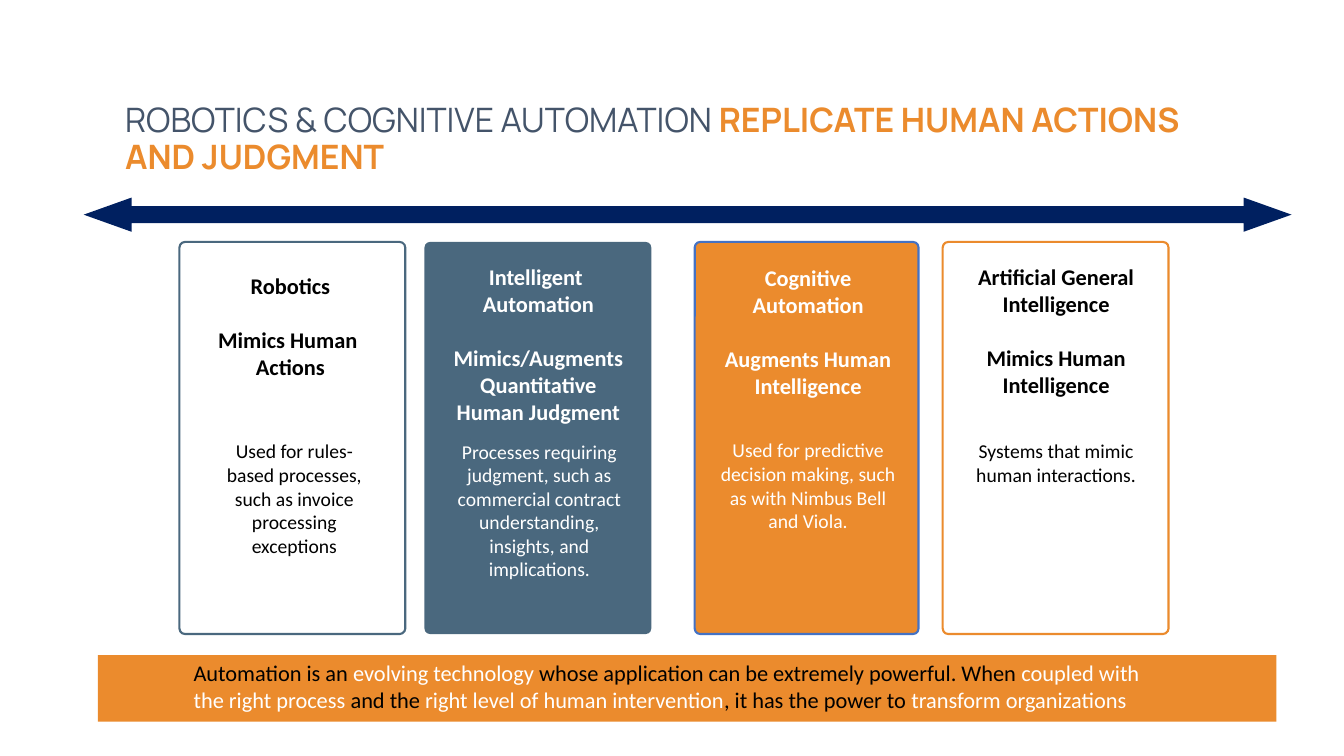
from pptx import Presentation
from pptx.dml.color import RGBColor
from pptx.enum.shapes import MSO_SHAPE
from pptx.enum.text import MSO_ANCHOR, MSO_AUTO_SIZE, PP_ALIGN
from pptx.util import Inches, Pt

NAVY = RGBColor(0x00, 0x20, 0x60)
GREY = RGBColor(0x44, 0x54, 0x6A)
STEEL = RGBColor(0x4A, 0x68, 0x7E)
GOLD = RGBColor(0xEB, 0x8B, 0x2D)
BLUE = RGBColor(0x44, 0x72, 0xC4)
BLACK = RGBColor(0, 0, 0)
WHITE = RGBColor(255, 255, 255)


class Deck:
    """Holds the slide and its text style, and draws each kind of element."""

    def __init__(self):
        self.prs = Presentation()
        self.prs.slide_width = Inches(13.33)
        self.prs.slide_height = Inches(7.5)
        self.slide = self.prs.slides.add_slide(self.prs.slide_layouts[5])
        self.font = "Calibri"

    def run(self, para, text, size, ink, bold=False, font=None):
        run = para.add_run()
        run.text = text
        run.font.name = font or self.font
        run.font.size = Pt(size)
        run.font.bold = bold
        run.font.color.rgb = ink

    def title(self, box, parts):
        shape = self.slide.shapes.title
        shape.left, shape.top, shape.width, shape.height = map(Inches, box)
        frame = shape.text_frame
        frame.word_wrap = True
        frame.auto_size = MSO_AUTO_SIZE.NONE
        frame.vertical_anchor = MSO_ANCHOR.TOP
        para = frame.paragraphs[0]
        para.alignment = PP_ALIGN.LEFT
        para.line_spacing = 0.9
        for text, ink, bold in parts:
            self.run(para, text, 24, ink, bold, "Manrope")

    def shape(self, home, kind, box, fill=None, line=None, adjust=()):
        shape = home.add_shape(kind, *map(Inches, box))
        shape.shadow.inherit = False
        for i, value in enumerate(adjust):
            shape.adjustments[i] = value
        if fill is None:
            shape.fill.background()
        else:
            shape.fill.solid()
            shape.fill.fore_color.rgb = fill
        if line is None:
            shape.line.fill.background()
        else:
            shape.line.color.rgb = line
            shape.line.width = Pt(1.5)

    def text(self, home, box, margin=None):
        frame = home.add_textbox(*map(Inches, box)).text_frame
        frame.word_wrap = True
        if margin is not None:
            frame.margin_left = frame.margin_right = Inches(margin)
            frame.margin_top = frame.margin_bottom = Inches(margin)
        return frame

    def card(self, left, width, fill, line, ink, head, body):
        home = self.slide.shapes.add_group_shape().shapes
        self.shape(home, MSO_SHAPE.ROUNDED_RECTANGLE,
                   (left, 2.4, width, 3.89), fill, line, [0.025])
        box, name, role = head
        frame = self.text(home, box)
        for i, line in enumerate(name + role):
            para = frame.add_paragraph() if i else frame.paragraphs[0]
            para.alignment = PP_ALIGN.CENTER
            if i == len(name):
                para.space_before = Pt(19.5)
            self.run(para, line, 16, ink, True)
        box, words, margin = body
        para = self.text(home, box, margin).paragraphs[0]
        para.alignment = PP_ALIGN.CENTER
        self.run(para, words, 14, ink)

    def banner(self, box, inner, parts):
        home = self.slide.shapes
        self.shape(home, MSO_SHAPE.RECTANGLE, box, GOLD)
        para = self.text(home, inner, 0).paragraphs[0]
        for text, ink in parts:
            self.run(para, text, 16, ink)


def main():
    deck = Deck()
    deck.title((1.14, 0.98, 11, 0.91), [
        ("ROBOTICS & COGNITIVE AUTOMATION ", GREY, False),
        ("REPLICATE HUMAN ACTIONS AND JUDGMENT", GOLD, True)])
    deck.card(4.21, 2.25, STEEL, None, WHITE,
              ((4.36, 2.56, 1.96, 1.99), ["Intelligent ", "Automation"],
               ["Mimics/Augments Quantitative Human Judgment"]),
              ((4.43, 4.36, 1.84, 1.46),
               "Processes requiring judgment, such as commercial contract "
               "understanding, insights, and implications.", 0))
    deck.card(1.78, 2.24, None, STEEL, BLACK,
              ((1.92, 2.65, 1.92, 1.45), ["Robotics"],
               ["Mimics Human ", "Actions"]),
              ((2.02, 4.31, 1.8, 1.28),
               "Used for rules-based processes, such as invoice "
               "processing exceptions", None))
    deck.card(9.35, 2.24, None, GOLD, BLACK,
              ((9.39, 2.56, 2.17, 1.72), ["Artificial General Intelligence"],
               ["Mimics Human Intelligence"]),
              ((9.39, 4.31, 2.17, 0.57),
               "Systems that mimic human interactions.", None))
    deck.card(6.89, 2.22, GOLD, BLUE, WHITE,
              ((6.99, 2.57, 2.05, 1.72), ["Cognitive Automation"],
               ["Augments Human Intelligence"]),
              ((6.99, 4.3, 2.05, 1.04),
               "Used for predictive decision making, such as with "
               "Nimbus Bell and Viola.", None))
    deck.shape(deck.slide.shapes, MSO_SHAPE.LEFT_RIGHT_ARROW,
               (0.83, 1.96, 11.98, 0.34), NAVY, adjust=[0.5, 1.4])
    deck.banner((0.97, 6.5, 11.69, 0.66), (1.92, 6.54, 9.65, 0.33), [
        ("Automation is an ", BLACK),
        ("evolving technology ", WHITE),
        ("whose application can be extremely powerful. When ", BLACK),
        ("coupled with the right process ", WHITE),
        ("and the ", BLACK),
        ("right level of human intervention", WHITE),
        (", it has the power to ", BLACK),
        ("transform organizations", WHITE)])
    deck.prs.save("out.pptx")


if __name__ == "__main__":
    main()
